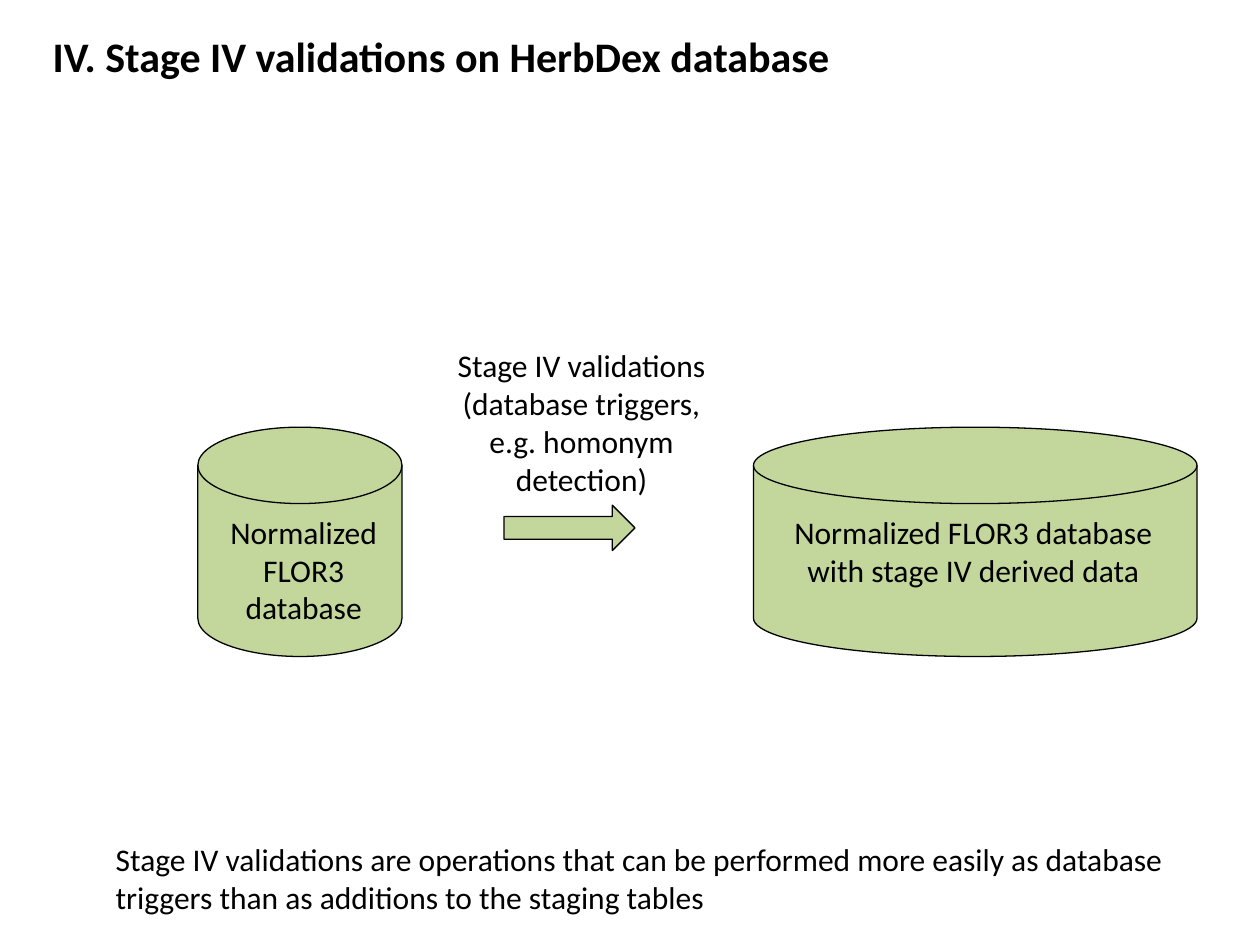
from pptx import Presentation
from pptx.dml.color import RGBColor
from pptx.enum.shapes import MSO_SHAPE
from pptx.enum.text import MSO_ANCHOR, PP_ALIGN
from pptx.util import Inches, Pt

BLACK = "000000"
GREEN = "C3D69B"
DISK_TOP, DISK_HEIGHT = 3.39, 1.82
CAPTION_TOP, CAPTION_HEIGHT = 4.02, 0.99


def color(hex_string):
    return RGBColor.from_string(hex_string)


class SlideBuilder:
    """Holds the slide and the style shared by its elements."""

    font_name = "Calibri"
    font_size = 18
    line_width = 0.75

    def __init__(self, slide):
        self.slide = slide

    def add_lines(self, shape, lines, size=font_size, bold=False, align=PP_ALIGN.LEFT):
        """Fill the shape's text frame with one paragraph per line."""
        frame = shape.text_frame
        frame.word_wrap = True
        frame.vertical_anchor = MSO_ANCHOR.TOP
        for index, line in enumerate(lines):
            paragraph = frame.add_paragraph() if index else frame.paragraphs[0]
            paragraph.alignment = align
            run = paragraph.add_run()
            run.text = line
            run.font.name = self.font_name
            run.font.size = Pt(size)
            run.font.bold = bold
            run.font.color.rgb = color(BLACK)

    def text(self, left, top, width, height, lines, **style):
        box = self.slide.shapes.add_textbox(
            Inches(left), Inches(top), Inches(width), Inches(height))
        self.add_lines(box, lines, **style)

    def shape(self, kind, left, top, width, height, outlined=True):
        shape = self.slide.shapes.add_shape(
            kind, Inches(left), Inches(top), Inches(width), Inches(height))
        shape.shadow.inherit = False
        shape.fill.solid()
        shape.fill.fore_color.rgb = color(GREEN)
        if outlined:
            shape.line.color.rgb = color(BLACK)
            shape.line.width = Pt(self.line_width)
        else:
            shape.line.fill.background()
        return shape

    def database(self, left, width, caption_left, caption_width, lines):
        """Draw a disk with a caption panel on its front."""
        self.shape(MSO_SHAPE.FLOWCHART_MAGNETIC_DISK,
                   left, DISK_TOP, width, DISK_HEIGHT)
        caption = self.shape(MSO_SHAPE.RECTANGLE, caption_left, CAPTION_TOP,
                             caption_width, CAPTION_HEIGHT, outlined=False)
        self.add_lines(caption, lines, align=PP_ALIGN.CENTER)


def main():
    presentation = Presentation()
    presentation.slide_width = Inches(10)
    presentation.slide_height = Inches(7.5)
    builder = SlideBuilder(
        presentation.slides.add_slide(presentation.slide_layouts[6]))

    builder.text(0.32, 0.19, 9.14, 0.49,
                 ["IV. Stage IV validations on HerbDex database"],
                 size=24, bold=True)
    builder.database(1.57, 1.62, 1.7, 1.42, ["Normalized FLOR3 database"])
    builder.database(5.98, 3.52, 6.1, 3.25,
                     ["Normalized FLOR3 database", "with stage IV derived data"])
    builder.shape(MSO_SHAPE.RIGHT_ARROW, 4, 4.01, 1.04, 0.36)
    builder.text(3.44, 2.7, 2.35, 0.69,
                 ["Stage IV validations", "(database triggers,",
                  "e.g. homonym detection)"], align=PP_ALIGN.CENTER)
    builder.text(0.82, 6.62, 8.97, 0.69,
                 ["Stage IV validations are operations that can be performed more "
                  "easily as database triggers than as additions to the staging tables"])
    presentation.save("out.pptx")


if __name__ == "__main__":
    main()
